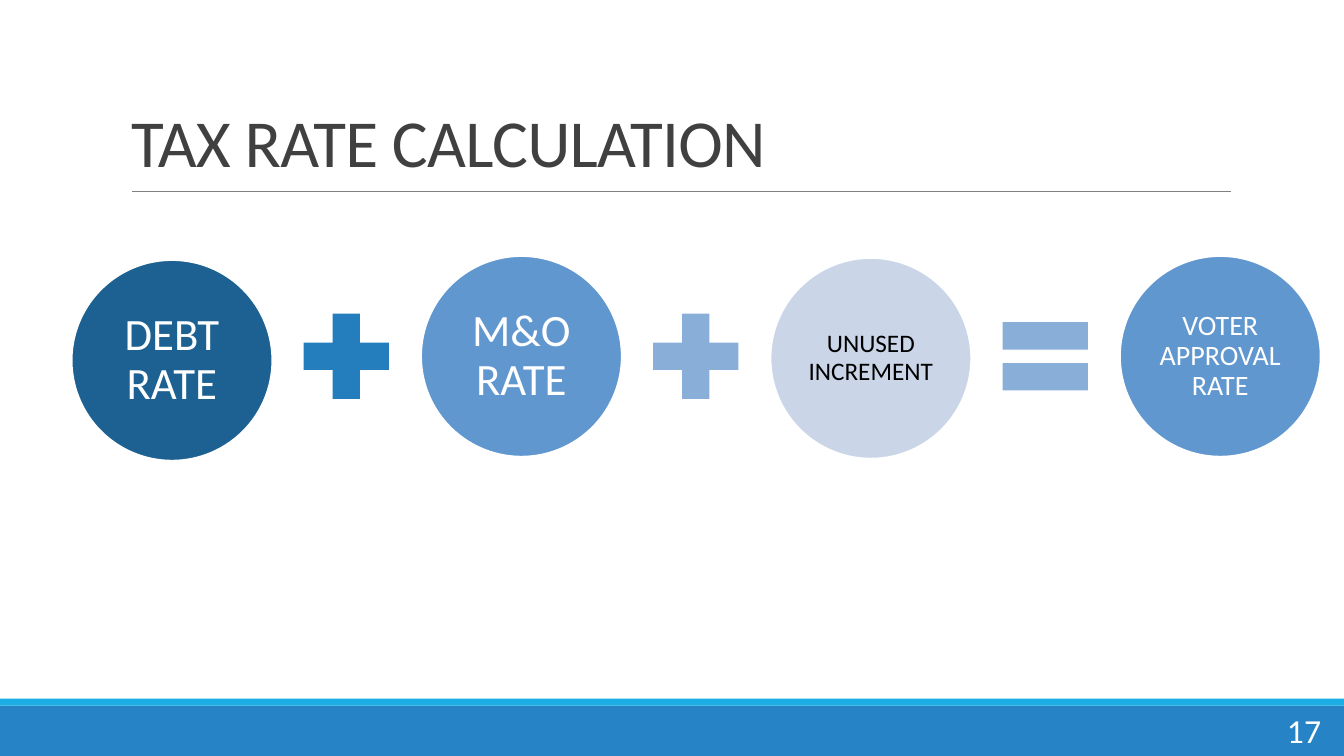
from dataclasses import dataclass

from lxml.etree import SubElement
from pptx import Presentation
from pptx.dml.color import RGBColor
from pptx.enum.shapes import MSO_CONNECTOR, MSO_SHAPE as Preset
from pptx.enum.text import MSO_ANCHOR as Anchor, MSO_AUTO_SIZE, PP_ALIGN as Align
from pptx.oxml.ns import qn
from pptx.util import Inches, Length, Pt

FONT = "Calibri"
COLORS = {
    "bar": "2683C6", "stripe": "1CADE4", "rule": "808080", "title": "404040",
    "white": "FFFFFF", "black": "000000", "navy": "1C6192", "blue": "6197CF",
    "pale": "CAD6E8", "strong_sign": "247DBD", "soft_sign": "89AFD9",
}
WIDTH, HEIGHT = Inches(13.33), Inches(7.5)

# Equation grid, in percent of the slide's width
FIRST_TERM, TERM_STEP, DIAMETER = 5.33, 26, 14.93
SIGN_OFFSET, SIGN_SIZE = 16.13, 8.63
SIGN_TOP = 39.47  # percent of the height


@dataclass(frozen=True)
class Term:
    label: str
    top: float
    fill: str
    size: int
    ink: str = "white"
    inset: float = 0.3


@dataclass(frozen=True)
class Sign:
    preset: Preset
    fill: str


TERMS = [
    Term("DEBT RATE", 34.4, "navy", 32),
    Term("M&O RATE", 33.87, "blue", 32),
    Term("UNUSED INCREMENT", 34.13, "pale", 18, "black", 0.23),
    Term("VOTER APPROVAL RATE", 33.87, "blue", 20, inset=0.23),
]
SIGNS = [
    Sign(Preset.MATH_PLUS, "strong_sign"),
    Sign(Preset.MATH_PLUS, "soft_sign"),
    Sign(Preset.MATH_EQUAL, "soft_sign"),
]


def across(percent: float) -> Length:
    return Length(round(WIDTH * percent / 100))


def down(percent: float) -> Length:
    return Length(round(HEIGHT * percent / 100))


def color(name: str) -> RGBColor:
    return RGBColor.from_string(COLORS[name])


def write(frame, text: str, size: int, ink: str, align: Align, anchor: Anchor,
          line_spacing: float = 1.0) -> None:
    frame.text = text
    frame.word_wrap = True
    frame.auto_size = MSO_AUTO_SIZE.NONE
    frame.vertical_anchor = anchor
    paragraph = frame.paragraphs[0]
    paragraph.alignment = align
    paragraph.line_spacing = line_spacing
    font = paragraph.runs[0].font
    font.name, font.size = FONT, Pt(size)
    font.color.rgb = color(ink)


def add_filled(slide, preset: Preset, left: Length, top: Length,
               width: Length, height: Length, fill: str):
    shape = slide.shapes.add_shape(preset, left, top, width, height)
    shape.shadow.inherit = False
    shape.fill.solid()
    shape.fill.fore_color.rgb = color(fill)
    shape.line.fill.background()
    return shape


def add_term(slide, column: int, term: Term) -> None:
    side = across(DIAMETER)
    circle = add_filled(slide, Preset.OVAL, across(FIRST_TERM + column * TERM_STEP),
                        down(term.top), side, side, term.fill)
    circle.line.color.rgb = color("white")
    circle.line.width = Pt(1.25)
    frame = circle.text_frame
    frame.margin_left = frame.margin_right = across(term.inset)
    frame.margin_top = frame.margin_bottom = across(term.inset)
    write(frame, term.label, term.size, term.ink, Align.CENTER, Anchor.MIDDLE, 0.9)


def add_sign(slide, column: int, sign: Sign) -> None:
    left = across(FIRST_TERM + SIGN_OFFSET + column * TERM_STEP)
    side = across(SIGN_SIZE)
    add_filled(slide, sign.preset, left, down(SIGN_TOP), side, side, sign.fill)


def main() -> None:
    deck = Presentation()
    deck.slide_width, deck.slide_height = WIDTH, HEIGHT
    slide = deck.slides.add_slide(deck.slide_layouts[5])

    # Footer bar and stripe
    add_filled(slide, Preset.RECTANGLE, 0, down(93.33), WIDTH, down(6.67), "bar")
    add_filled(slide, Preset.RECTANGLE, 0, down(92.4), WIDTH, down(0.93), "stripe")

    # Title and the rule under it
    rule = slide.shapes.add_connector(MSO_CONNECTOR.STRAIGHT, across(9.83),
                                      down(25.33), across(91.6), down(25.33))
    rule.line.color.rgb = color("rule")
    rule.line.width = Pt(0.5)
    SubElement(rule._element.spPr, qn("a:effectLst"))
    title = slide.shapes.title
    title.left, title.top = across(9), down(3.47)
    title.width, title.height = across(82.52), down(21.2)
    write(title.text_frame, "TAX RATE CALCULATION", 48, "title",
          Align.LEFT, Anchor.BOTTOM, 0.85)
    title.text_frame.paragraphs[0].runs[0].font._element.set("spc", "-50")

    # Equation
    for column, term in enumerate(TERMS):
        add_term(slide, column, term)
    for column, sign in enumerate(SIGNS):
        add_sign(slide, column, sign)

    # Page number
    page = slide.shapes.add_textbox(across(88.3), down(93.87),
                                    across(10.73), down(5.33))
    write(page.text_frame, "17", 24, "white", Align.RIGHT, Anchor.MIDDLE)

    deck.save("out.pptx")


if __name__ == "__main__":
    main()
